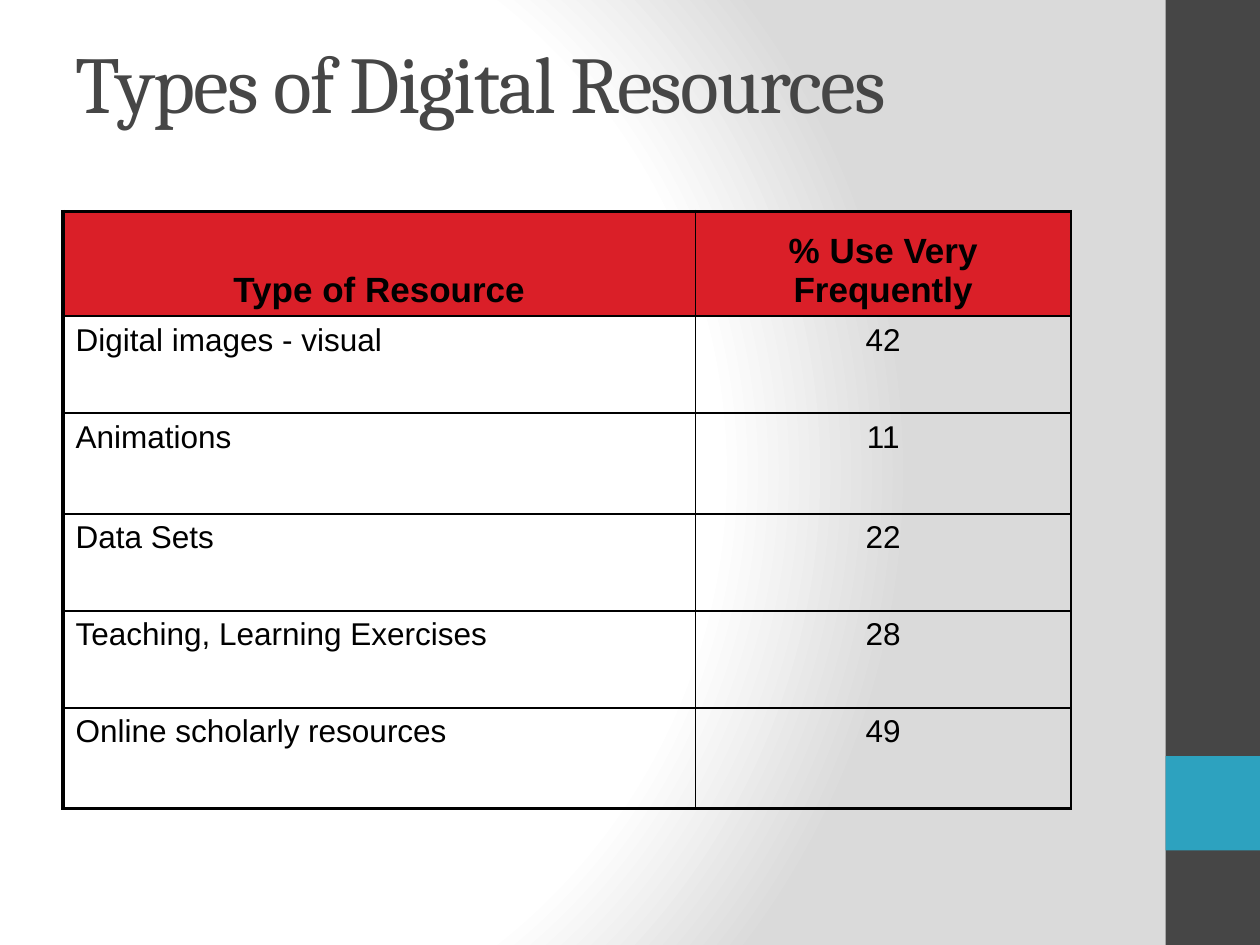
from dataclasses import dataclass

import lxml.etree
import pptx
import pptx.dml.color
import pptx.enum.shapes
import pptx.enum.text
import pptx.oxml
import pptx.oxml.ns
import pptx.util

Inches, Pt = pptx.util.Inches, pptx.util.Pt
RGB = pptx.dml.color.RGBColor.from_string
ALIGN = pptx.enum.text.PP_ALIGN
ANCHOR = pptx.enum.text.MSO_ANCHOR
qn = pptx.oxml.ns.qn


@dataclass(frozen=True)
class Theme:
    dark: str = "464646"
    accent: str = "2DA2BF"
    header: str = "DA1F28"
    text: str = "000000"
    light: str = "FFFFFF"
    shade: str = "DADADA"
    title_font: str = "Cambria"
    body_font: str = "Arial"
    title_size: float = 46
    header_size: float = 20
    body_size: float = 18
    thin: float = 1
    thick: float = 2.25


@dataclass(frozen=True)
class Band:
    top: float
    height: float
    color: str


@dataclass(frozen=True)
class Resource:
    name: str
    percent: str


THEME = Theme()
BANDS = [Band(0, 7.5, THEME.dark), Band(6, 0.75, THEME.accent)]
ROWS = [
    Resource("Type of Resource", "% Use Very Frequently"),
    Resource("Digital images - visual", "42"),
    Resource("Animations", "11"),
    Resource("Data Sets", "22"),
    Resource("Teaching, Learning Exercises", "28"),
    Resource("Online scholarly resources", "49"),
]
COL_WIDTHS = [5.02, 2.98]
ROW_HEIGHTS = [0.83, 0.77, 0.8, 0.77, 0.77, 0.8]


def set_background(s) -> None:
    """Fill the slide with a radial gradient centred on its left part."""
    fill = s.background.fill
    fill.gradient()
    stops = [(0, THEME.light), (75, THEME.light), (100, THEME.shade)]
    stop_xml = "".join(
        f'<a:gs pos="{pos * 1000}"><a:srgbClr val="{color}"/></a:gs>'
        for pos, color in stops
    )
    grad = pptx.oxml.parse_xml(
        f'<a:gradFill {pptx.oxml.ns.nsdecls("a")} rotWithShape="1">'
        f"<a:gsLst>{stop_xml}</a:gsLst>"
        '<a:path path="circle">'
        '<a:fillToRect l="20000" t="50000" r="100000" b="50000"/>'
        "</a:path></a:gradFill>"
    )
    old = s.background._cSld.find(".//" + qn("a:gradFill"))
    old.getparent().replace(old, grad)


def add_band(s, band: Band) -> None:
    sp = s.shapes.add_shape(
        pptx.enum.shapes.MSO_SHAPE.RECTANGLE,
        Inches(9.25), Inches(band.top), Inches(0.75), Inches(band.height),
    )
    sp.shadow.inherit = False
    sp.fill.solid()
    sp.fill.fore_color.rgb = RGB(band.color)
    sp.line.fill.background()


def set_title(s, text: str) -> None:
    sp = s.shapes.title
    sp.left, sp.top = Inches(0.5), Inches(0.13)
    sp.width, sp.height = Inches(8.25), Inches(1.03)
    tf = sp.text_frame
    tf.text = text
    tf.auto_size = pptx.enum.text.MSO_AUTO_SIZE.NONE
    tf.vertical_anchor = ANCHOR.MIDDLE
    p = tf.paragraphs[0]
    p.alignment = ALIGN.LEFT
    p.font.name = THEME.title_font
    p.font.size = Pt(THEME.title_size)
    p.font.color.rgb = RGB(THEME.dark)
    p.runs[0]._r.get_or_add_rPr().set("spc", "-100")


def set_borders(cell, left: float, right: float, top: float, bottom: float) -> None:
    """Draw the four sides of a cell, with widths in points."""
    tc_pr = cell._tc.get_or_add_tcPr()
    sides = {"lnL": left, "lnR": right, "lnT": top, "lnB": bottom}
    for i, (tag, width) in enumerate(sides.items()):
        ln = lxml.etree.Element(qn(f"a:{tag}"), w=str(Pt(width)))
        fill = lxml.etree.SubElement(ln, qn("a:solidFill"))
        lxml.etree.SubElement(fill, qn("a:srgbClr"), val=THEME.text)
        tc_pr.insert(i, ln)


def set_space_before(p, percent: int) -> None:
    """Set paragraph spacing as a share of the line height."""
    spacing = lxml.etree.Element(qn("a:spcBef"))
    lxml.etree.SubElement(spacing, qn("a:spcPct"), val=str(percent * 1000))
    p._p.get_or_add_pPr().insert(0, spacing)


def fill_cell(cell, text: str, is_header: bool, centred: bool) -> None:
    cell.text = text
    cell.vertical_anchor = ANCHOR.BOTTOM if is_header else ANCHOR.TOP
    if is_header:
        cell.fill.solid()
        cell.fill.fore_color.rgb = RGB(THEME.header)
    else:
        cell.fill.background()
    p = cell.text_frame.paragraphs[0]
    p.alignment = ALIGN.CENTER if centred else ALIGN.LEFT
    p.font.name = THEME.body_font
    p.font.size = Pt(THEME.header_size if is_header else THEME.body_size)
    p.font.bold = is_header
    p.font.color.rgb = RGB(THEME.text)
    set_space_before(p, 20)


def add_resource_table(s) -> None:
    table = s.shapes.add_table(
        len(ROWS), len(COL_WIDTHS), Inches(0.5), Inches(1.68),
        Inches(sum(COL_WIDTHS)), Inches(sum(ROW_HEIGHTS)),
    ).table
    table.first_row = table.horz_banding = False
    for column, width in zip(table.columns, COL_WIDTHS):
        column.width = Inches(width)
    for i, (row, height) in enumerate(zip(ROWS, ROW_HEIGHTS)):
        table.rows[i].height = Inches(height)
        for j, text in enumerate((row.name, row.percent)):
            cell = table.cell(i, j)
            fill_cell(cell, text, is_header=i == 0, centred=i == 0 or j == 1)
            set_borders(
                cell,
                left=THEME.thick if j == 0 else THEME.thin,
                right=THEME.thin,
                top=THEME.thick if i == 0 else THEME.thin,
                bottom=THEME.thick if i == len(ROWS) - 1 else THEME.thin,
            )


def main() -> None:
    prs = pptx.Presentation()
    prs.slide_width, prs.slide_height = Inches(10), Inches(7.5)
    s = prs.slides.add_slide(prs.slide_layouts.get_by_name("Title Only"))
    set_background(s)
    for band in BANDS:
        add_band(s, band)
    set_title(s, "Types of Digital Resources")
    add_resource_table(s)
    prs.save("out.pptx")


if __name__ == "__main__":
    main()
